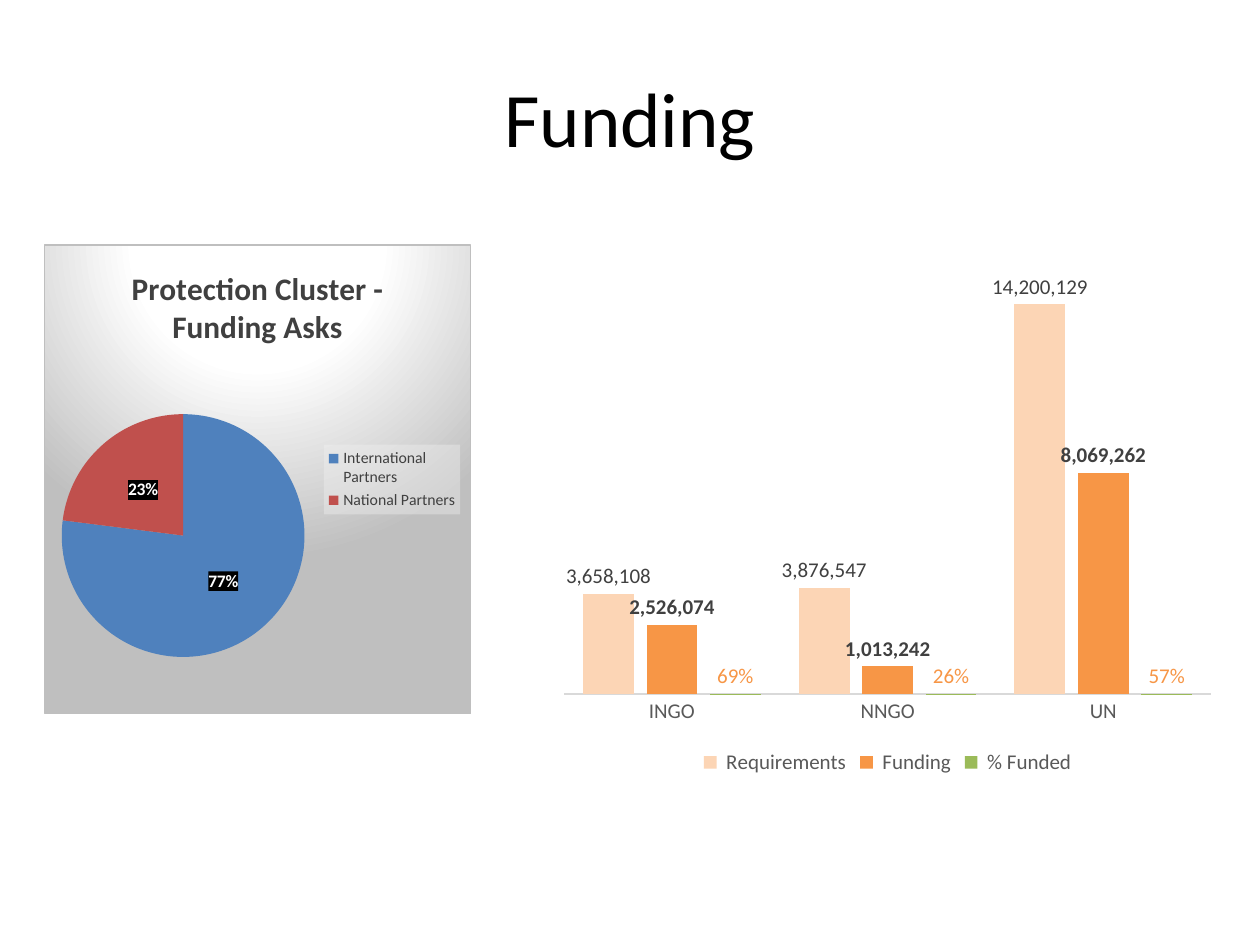
from dataclasses import dataclass

from lxml import etree
from pptx import Presentation
from pptx import util as u
from pptx.chart.data import CategoryChartData
from pptx.dml.color import RGBColor
from pptx.enum import chart as c
from pptx.enum import text
from pptx.oxml.ns import qn

DRAWING = "http://schemas.openxmlformats.org/drawingml/2006/main"
CHART = "http://schemas.openxmlformats.org/drawingml/2006/chart"


@dataclass(frozen=True)
class Theme:
    font: str = "Calibri"
    black: str = "000000"
    white: str = "FFFFFF"
    dark: str = "404040"
    grey: str = "595959"
    silver: str = "BFBFBF"
    axis: str = "D9D9D9"
    pale: str = "F2F2F2"
    blue: str = "4F81BD"
    red: str = "C0504D"
    peach: str = "FCD5B5"
    orange: str = "F79646"
    green: str = "9BBB59"
    title: int = 44
    chart_title: int = 18
    label: int = 12
    small: int = 10
    legend: int = 9


THEME = Theme()


@dataclass(frozen=True)
class Box:
    left: float
    top: float
    width: float
    height: float

    def lengths(self) -> tuple:
        return tuple(u.Inches(n) for n in (self.left, self.top, self.width, self.height))


@dataclass(frozen=True)
class Measure:
    name: str
    values: tuple
    color: str
    label_color: str = THEME.dark
    bold: bool = False
    number_format: str = "#,##0"


PIE_BOX = Box(0.35, 1.94, 3.39, 3.73)
COLUMN_BOX = Box(4.37, 1.94, 5.35, 4.25)
PARTNERS = {"International Partners": (77, THEME.blue), "National Partners": (23, THEME.red)}
AGENCIES = ("INGO", "NNGO", "UN")
MEASURES = (
    Measure(" Requirements", (3658108, 3876547, 14200129), THEME.peach),
    Measure(" Funding", (2526074, 1013242, 8069262), THEME.orange, bold=True),
    Measure(" % Funded", (0.69, 0.26, 0.57), THEME.green, THEME.orange, number_format="0%"),
)


def assign(target, **values) -> None:
    for name, value in values.items():
        setattr(target, name, value)


def style_font(font, size: int, color: str, bold: bool = False) -> None:
    assign(font, size=u.Pt(size), bold=bold, name=THEME.font)
    font.color.rgb = RGBColor.from_string(color)


def fill_solid(fill, color: str) -> None:
    fill.solid()
    fill.fore_color.rgb = RGBColor.from_string(color)


def solid_xml(color: str, opacity: int = 100) -> str:
    return (f'<a:solidFill><a:srgbClr val="{color}"><a:alpha val="{opacity * 1000}"/>'
            "</a:srgbClr></a:solidFill>")


def gradient_xml() -> str:
    stops = "".join(
        f'<a:gs pos="{position * 1000}"><a:srgbClr val="{color}"/></a:gs>'
        for position, color in ((0, THEME.white), (39, THEME.white), (100, THEME.silver))
    )
    return (f'<a:gradFill><a:gsLst>{stops}</a:gsLst><a:path path="circle">'
            '<a:fillToRect l="50000" t="-80000" r="50000" b="180000"/></a:path></a:gradFill>'
            f'<a:ln w="{u.Pt(0.75)}">{solid_xml(THEME.silver)}</a:ln>')


def paint_background(element, paint: str) -> None:
    """Fill a chart part that already has text properties."""
    properties = etree.fromstring(
        f'<c:spPr xmlns:c="{CHART}" xmlns:a="{DRAWING}">{paint}</c:spPr>')
    element.find(qn("c:txPr")).addprevious(properties)


def place_plot(chart, x: float, y: float, w: float, h: float) -> None:
    """Set the inner plot area as fractions of the chart."""
    plot_area = chart.plots[0]._element.getparent()
    for old in plot_area.findall(qn("c:layout")):
        plot_area.remove(old)
    layout = etree.Element(qn("c:layout"))
    manual = etree.SubElement(layout, qn("c:manualLayout"))
    settings = {"layoutTarget": "inner", "xMode": "edge", "yMode": "edge",
                "x": x, "y": y, "w": w, "h": h}
    for name, value in settings.items():
        etree.SubElement(manual, qn(f"c:{name}")).set("val", str(value))
    plot_area.insert(0, layout)


def add_chart(slide, kind, box: Box, data: CategoryChartData, legend_position,
              legend_size: int, legend_color: str):
    chart = slide.shapes.add_chart(kind, *box.lengths(), data).chart
    style_font(chart.font, THEME.small, THEME.black)
    chart.has_legend = True
    assign(chart.legend, position=legend_position, include_in_layout=False)
    style_font(chart.legend.font, legend_size, legend_color)
    return chart


def add_partner_pie(slide) -> None:
    data = CategoryChartData(number_format="#,##0")
    data.categories = list(PARTNERS)
    data.add_series("Series 1", [value for value, _ in PARTNERS.values()])
    chart = add_chart(slide, c.XL_CHART_TYPE.PIE, PIE_BOX, data,
                      c.XL_LEGEND_POSITION.RIGHT, THEME.legend, THEME.dark)
    chart.has_title = True
    chart.chart_title.include_in_layout = False
    run = chart.chart_title.text_frame.paragraphs[0].add_run()
    run.text = "Protection Cluster - Funding Asks"
    style_font(run.font, THEME.chart_title, THEME.dark, bold=True)
    series = chart.plots[0].series[0]
    for index, (_, color) in enumerate(PARTNERS.values()):
        fill_solid(series.points[index].format.fill, color)
    labels = series.data_labels
    assign(labels, show_percentage=True, show_value=False, number_format="0%",
           number_format_is_linked=False, position=c.XL_LABEL_POSITION.CENTER)
    style_font(labels.font, THEME.small, THEME.white, bold=True)
    paint_background(labels._element, solid_xml(THEME.black, 75))
    paint_background(chart.legend._element, solid_xml(THEME.pale, 39))
    paint_background(chart._chartSpace, gradient_xml())
    place_plot(chart, 0.04, 0.36, 0.57, 0.52)


def add_funding_columns(slide) -> None:
    data = CategoryChartData()
    data.categories = AGENCIES
    for measure in MEASURES:
        data.add_series(measure.name, measure.values, measure.number_format)
    chart = add_chart(slide, c.XL_CHART_TYPE.COLUMN_CLUSTERED, COLUMN_BOX, data,
                      c.XL_LEGEND_POSITION.BOTTOM, THEME.label, THEME.grey)
    chart.has_title = False
    paint_background(chart._chartSpace, solid_xml(THEME.white))
    plot = chart.plots[0]
    assign(plot, gap_width=75, overlap=-25, vary_by_categories=False)
    for series, measure in zip(plot.series, MEASURES):
        fill_solid(series.format.fill, measure.color)
        labels = series.data_labels
        assign(labels, show_value=True, number_format=measure.number_format,
               number_format_is_linked=False, position=c.XL_LABEL_POSITION.OUTSIDE_END)
        style_font(labels.font, THEME.label, measure.label_color, measure.bold)
    assign(chart.value_axis, visible=False, has_major_gridlines=False)
    axis = chart.category_axis
    axis.major_tick_mark = c.XL_TICK_MARK.NONE
    style_font(axis.tick_labels.font, THEME.label, THEME.grey)
    axis.format.line.width = u.Pt(0.75)
    fill_solid(axis.format.line.fill, THEME.axis)
    place_plot(chart, 0.02, 0.02, 0.96, 0.82)


def add_title(slide) -> None:
    title = slide.shapes.title
    left, top, width, height = Box(0.5, 0.3, 9, 1.25).lengths()
    assign(title, left=left, top=top, width=width, height=height)
    title.text_frame.text = "Funding"
    title.text_frame.vertical_anchor = text.MSO_ANCHOR.MIDDLE
    paragraph = title.text_frame.paragraphs[0]
    paragraph.alignment = text.PP_ALIGN.CENTER
    style_font(paragraph.runs[0].font, THEME.title, THEME.black)


def main() -> None:
    presentation = Presentation()
    assign(presentation, slide_width=u.Inches(10), slide_height=u.Inches(7.5))
    slide = presentation.slides.add_slide(presentation.slide_layouts.get_by_name("Title Only"))
    add_title(slide)
    add_partner_pie(slide)
    add_funding_columns(slide)
    presentation.save("out.pptx")


if __name__ == "__main__":
    main()
